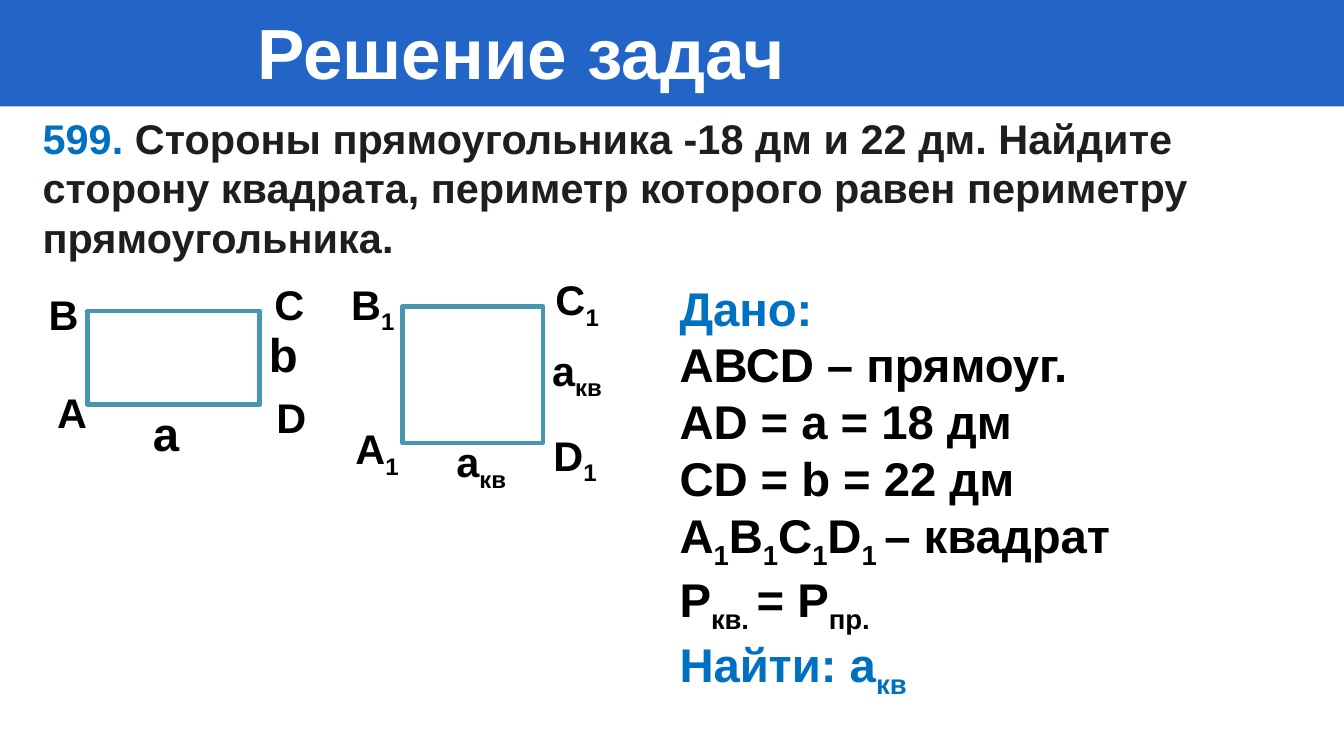
from pptx import Presentation
from pptx.dml.color import RGBColor
from pptx.enum.shapes import MSO_SHAPE
from pptx.enum.text import MSO_ANCHOR, MSO_AUTO_SIZE, PP_ALIGN
from pptx.oxml import parse_xml
from pptx.oxml.ns import nsdecls
from pptx.util import Inches, Pt

RECTANGLE = MSO_SHAPE.RECTANGLE
TOP = MSO_ANCHOR.TOP
NO_AUTOFIT = MSO_AUTO_SIZE.NONE
LEFT, CENTER = PP_ALIGN.LEFT, PP_ALIGN.CENTER

WHITE = RGBColor(0xFF, 0xFF, 0xFF)
BLACK = RGBColor(0x00, 0x00, 0x00)
INK = RGBColor(0x21, 0x1D, 0x1E)
BANNER_BLUE = RGBColor(0x23, 0x65, 0xC7)
ACCENT_BLUE = RGBColor(0x00, 0x70, 0xC0)
OUTLINE_TEAL = RGBColor(0x46, 0x96, 0xB1)

FONT = "Arial"
SUBSCRIPT_BASELINE = "-25000"
LABEL_WIDTH = 0.5
TWO_CONTENT_LAYOUT = 3

# Text between bars is set as a subscript.
GIVEN = [
    ("Дано:", ACCENT_BLUE),
    ("АВСD – прямоуг.", BLACK),
    ("АD = а = 18 дм", BLACK),
    ("СD = b = 22 дм", BLACK),
    ("А|1|В|1|С|1|D|1 |– квадрат", BLACK),
    ("P|кв. |= Р|пр.", BLACK),
    ("Найти: а|кв", ACCENT_BLUE),
]

# Vertex labels: text, left, top
VERTICES = [
    ("А", 0.17, 1.77), ("В", 0.13, 1.31), ("С", 1.19, 1.26), ("D", 1.2, 1.79),
    ("А|1", 1.57, 1.94), ("В|1", 1.55, 1.26), ("С|1", 2.51, 1.24), ("D|1", 2.5, 1.97),
]

# Side labels: text, horizontal centre, top, size
SIDES = [
    ("а", 0.78, 1.85, 16), ("b", 1.33, 1.48, 16),
    ("а|кв", 2.26, 2.0, 14), ("а|кв", 2.71, 1.57, 14),
]


def add_runs(paragraph, marked_text, size, color):
    for index, part in enumerate(marked_text.split("|")):
        run = paragraph.add_run()
        run.text = part
        run.font.name = FONT
        run.font.size = Pt(size)
        run.font.bold = True
        run.font.color.rgb = color
        if index % 2:
            run.font._element.set("baseline", SUBSCRIPT_BASELINE)


def place(shape, left, top, width, height):
    shape.left, shape.top = Inches(left), Inches(top)
    shape.width, shape.height = Inches(width), Inches(height)


def format_frame(shape):
    frame = shape.text_frame
    frame.word_wrap = True
    frame.auto_size = NO_AUTOFIT
    frame.vertical_anchor = TOP
    return frame


def fill_title(title, text):
    place(title, 0, 0, 6.31, 0.5)
    title.fill.solid()
    title.fill.fore_color.rgb = BANNER_BLUE
    frame = format_frame(title)
    frame.margin_left = Inches(1.21)
    frame.margin_top = Inches(0.04)
    frame.margin_right = frame.margin_bottom = 0
    paragraph = frame.paragraphs[0]
    paragraph.alignment = LEFT
    add_runs(paragraph, text, 24, WHITE)


def fill_body(body, box, paragraphs, size):
    """Each paragraph is a list of (marked text, colour) pieces."""
    place(body, *box)
    frame = format_frame(body)
    for index, pieces in enumerate(paragraphs):
        paragraph = frame.add_paragraph() if index else frame.paragraphs[0]
        paragraph.alignment = LEFT
        paragraph.space_before = Pt(0)
        properties = paragraph._p.get_or_add_pPr()
        properties.set("marL", "0")
        properties.set("indent", "0")
        properties.append(parse_xml(f"<a:buNone {nsdecls('a')}/>"))
        for text, color in pieces:
            add_runs(paragraph, text, size, color)


def add_figure(slide, left, top, width, height):
    shape = slide.shapes.add_shape(
        RECTANGLE, Inches(left), Inches(top), Inches(width), Inches(height))
    shape.shadow.inherit = False
    shape.fill.solid()
    shape.fill.fore_color.rgb = WHITE
    shape.line.color.rgb = OUTLINE_TEAL
    shape.line.width = Pt(1.5)


def add_label(slide, text, left, top, size=14, alignment=LEFT):
    box = slide.shapes.add_textbox(
        Inches(left), Inches(top), Inches(LABEL_WIDTH), Inches(0.34))
    paragraph = format_frame(box).paragraphs[0]
    paragraph.alignment = alignment
    add_runs(paragraph, text, size, BLACK)


def main():
    presentation = Presentation()
    presentation.slide_width = Inches(6.31)
    presentation.slide_height = Inches(3.55)
    layout = presentation.slide_layouts[TWO_CONTENT_LAYOUT]
    slide = presentation.slides.add_slide(layout)
    title, problem, given = slide.placeholders

    # Title banner and problem statement
    fill_title(title, "Решение задач")
    statement = (" Стороны прямоугольника -18 дм и 22 дм. Найдите сторону квадрата, "
                 "периметр которого равен периметру прямоугольника.")
    fill_body(problem, (0.1, 0.48, 6.11, 0.81),
              [[("599.", ACCENT_BLUE), (statement, INK)]], 14)

    # Rectangle and square with their labels
    add_figure(slide, 0.41, 1.46, 0.81, 0.44)
    add_figure(slide, 1.89, 1.44, 0.66, 0.64)
    for text, left, top in VERTICES:
        add_label(slide, text, left, top)
    for text, center, top, size in SIDES:
        add_label(slide, text, center - LABEL_WIDTH / 2, top, size, CENTER)

    # Given and unknown values
    fill_body(given, (3.09, 1.26, 3.06, 2.22), [[line] for line in GIVEN], 16)

    presentation.save("out.pptx")


if __name__ == "__main__":
    main()
